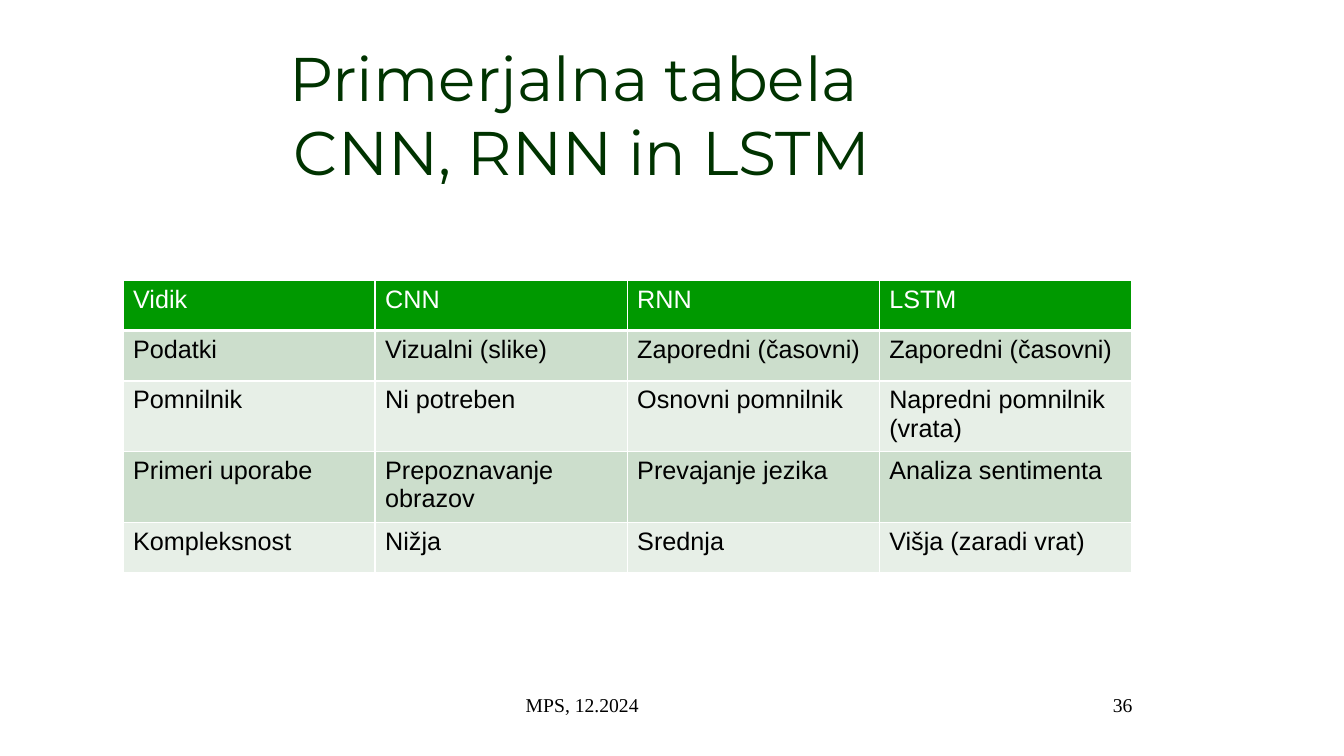
from lxml import etree
from pptx import Presentation
from pptx.dml.color import RGBColor
from pptx.enum.text import MSO_ANCHOR as Anchor, PP_ALIGN as Align
from pptx.oxml.ns import qn
from pptx.util import Inches, Pt

TITLE = "Primerjalna tabela \vCNN, RNN in LSTM"
FOOTER = "MPS, 12.2024"
PAGE_NUMBER = "36"
ROWS = [
    ("Vidik", "CNN", "RNN", "LSTM"),
    ("Podatki", "Vizualni (slike)", "Zaporedni (časovni)", "Zaporedni (časovni)"),
    ("Pomnilnik", "Ni potreben", "Osnovni pomnilnik", "Napredni pomnilnik (vrata)"),
    ("Primeri uporabe", "Prepoznavanje obrazov", "Prevajanje jezika", "Analiza sentimenta"),
    ("Kompleksnost", "Nižja", "Srednja", "Višja (zaradi vrat)"),
]
COLORS = {
    "title": "003300", "text": "000000", "white": "FFFFFF",
    "header": "009900", "odd": "CCDECC", "even": "E7EFE7",
}
COLUMN_WIDTH, ROW_HEIGHT = 2.5, 0.5
TABLE_LEFT, TABLE_TOP = 1.22, 2.78
FOOTER_TOP, FOOTER_HEIGHT = 6.83, 0.5


def write(frame, text, font, size, color="text", align=Align.LEFT):
    para = frame.paragraphs[0]
    para.text = text
    para.alignment = align
    para.font.name = font
    para.font.size = Pt(size)
    para.font.color.rgb = RGBColor.from_string(COLORS[color])


def add_text(page, place, text, anchor=Anchor.TOP, **style):
    box = page.shapes.add_textbox(*map(Inches, place))
    box.text_frame.word_wrap = True
    box.text_frame.vertical_anchor = anchor
    write(box.text_frame, text, **style)


def add_borders(cell, bottom_width):
    """Draw white cell edges; they must precede the fill in the XML."""
    properties = cell._tc.get_or_add_tcPr()
    widths = {"L": 1, "R": 1, "T": 1, "B": bottom_width}
    for index, (side, width) in enumerate(widths.items()):
        line = etree.Element(qn(f"a:ln{side}"), w=str(Pt(width)))
        fill = etree.SubElement(line, qn("a:solidFill"))
        etree.SubElement(fill, qn("a:srgbClr"), val=COLORS["white"])
        properties.insert(index, line)


def add_comparison(page):
    row_count, column_count = len(ROWS), len(ROWS[0])
    size = column_count * COLUMN_WIDTH, row_count * ROW_HEIGHT
    table = page.shapes.add_table(
        row_count, column_count, *map(Inches, (TABLE_LEFT, TABLE_TOP, *size))
    ).table
    for row, texts in enumerate(ROWS):
        is_header = row == 0
        shade = "header" if is_header else "odd" if row % 2 else "even"
        for column, text in enumerate(texts):
            cell = table.cell(row, column)
            cell.fill.solid()
            cell.fill.fore_color.rgb = RGBColor.from_string(COLORS[shade])
            add_borders(cell, bottom_width=3 if is_header else 1)
            write(cell.text_frame, text, "Arial", 18, "white" if is_header else "text")
            cell.text_frame.paragraphs[0].font.bold = False


def main():
    deck = Presentation()
    deck.slide_width, deck.slide_height = Inches(13.33), Inches(7.5)
    page = deck.slides.add_slide(deck.slide_layouts[6])
    add_text(page, (0.33, 0.33, 10.89, 1.58), TITLE, anchor=Anchor.BOTTOM,
             font="Montserrat", size=44, color="title", align=Align.CENTER)
    add_comparison(page)
    for text, left, width, align in (
        (FOOTER, 3.22, 5.11, Align.CENTER),
        (PAGE_NUMBER, 9.11, 2.22, Align.RIGHT),
    ):
        add_text(page, (left, FOOTER_TOP, width, FOOTER_HEIGHT), text,
                 font="Times New Roman", size=14, align=align)
    deck.save("out.pptx")


if __name__ == "__main__":
    main()
